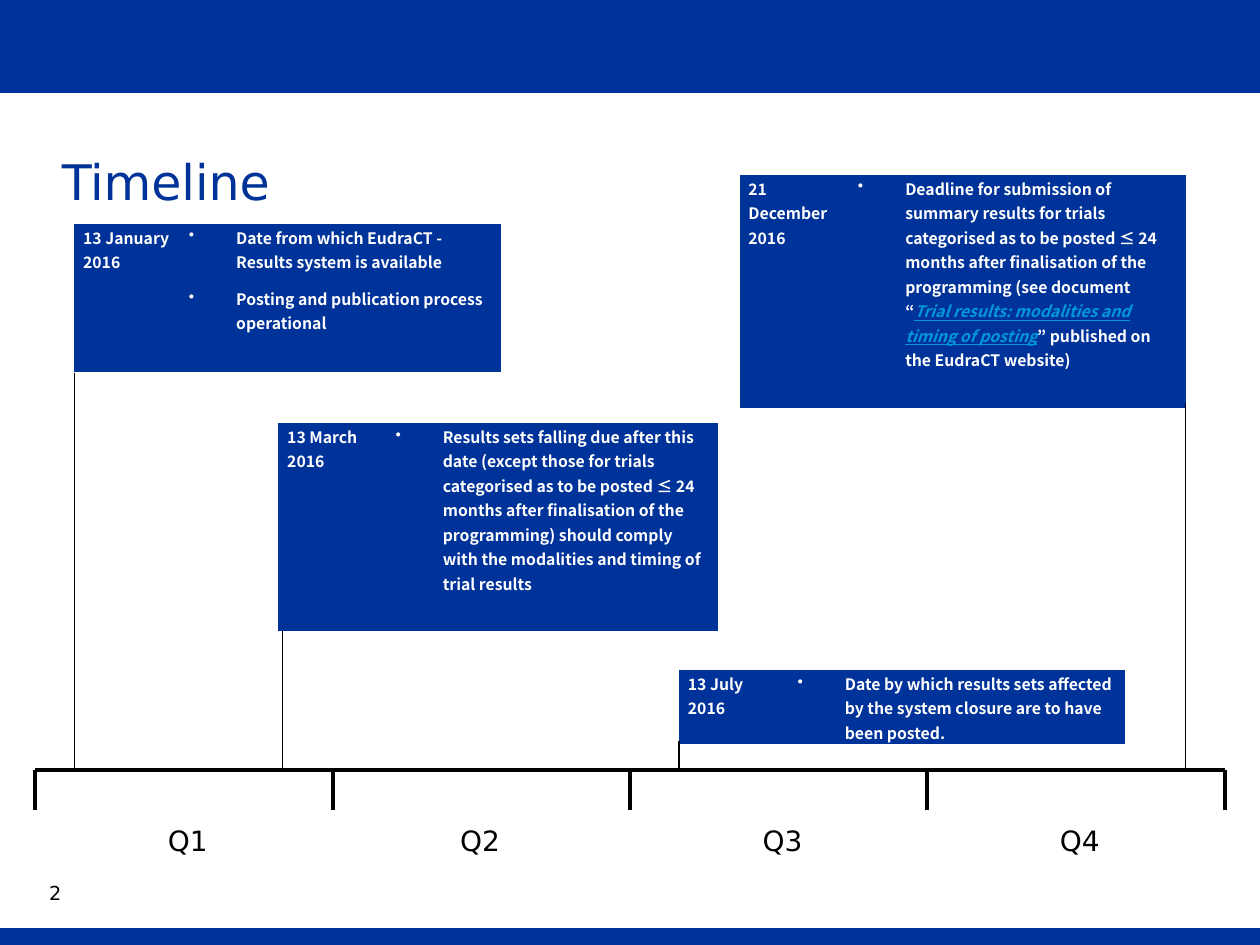
from dataclasses import dataclass

from lxml import etree
from pptx import Presentation, util as u
from pptx.dml.color import RGBColor
from pptx.enum import shapes, text
from pptx.oxml.ns import qn


@dataclass(frozen=True)
class Theme:
    blue = RGBColor.from_string("003399")
    link = RGBColor.from_string("0098DB")
    white = RGBColor.from_string("FFFFFF")
    black = RGBColor.from_string("000000")
    heading_font = "DejaVu Sans"
    event_font = "Noto Sans CJK KR"
    title_size, quarter_size, number_size, event_size = 28, 16, 11, 9


NO_TABLE_STYLE = "{2D5ABB26-0587-4C30-8999-92F81FD0307C}"
COLUMNS, ROWS = 100, 75

deck = Presentation()
deck.slide_width, deck.slide_height = u.Inches(10), u.Inches(7.5)
CELL = deck.slide_width / COLUMNS
slide = deck.slides.add_slide(deck.slide_layouts[5])


def grid(*cells):
    """Turn counts of grid cells into lengths."""
    return [round(cell * CELL) for cell in cells]


def add_line(x1, y1, x2, y2, color, width):
    line = slide.shapes.add_connector(
        shapes.MSO_CONNECTOR.STRAIGHT, *grid(x1, y1, x2, y2))
    line.line.color.rgb = color
    line.line.width = u.Pt(width)
    etree.SubElement(line._element.spPr, qn("a:effectLst"))


# Header and footer bands, each with a fine white edge
header_height, footer_top = 7.4, 73.6
for top, height, edge in ((footer_top, ROWS - footer_top, footer_top),
                          (0, header_height, header_height)):
    band = slide.shapes.add_shape(
        shapes.MSO_SHAPE.RECTANGLE, *grid(0, top, COLUMNS, height))
    band.shadow.inherit = False
    band.fill.solid()
    band.fill.fore_color.rgb = Theme.blue
    band.line.fill.background()
    add_line(0, edge, COLUMNS, edge, Theme.white, 0.25)

# Title
title = slide.shapes.title
title.left, title.top, title.width, title.height = grid(3.9, 11.2, 92.5, 10.4)
title_frame = title.text_frame
title_frame.text = "Timeline"
title_frame.auto_size = text.MSO_AUTO_SIZE.NONE
title_frame.vertical_anchor = text.MSO_ANCHOR.TOP
heading = title_frame.paragraphs[0]
heading.alignment = text.PP_ALIGN.LEFT
heading.line_spacing = u.Pt(36)

# Axis with one tick at each quarter's edge
axis_left, axis_y, tick_end, quarter = 2.8, 61.1, 64.3, 23.6
add_line(axis_left, axis_y, axis_left + 4 * quarter, axis_y, Theme.black, 2.25)
for edge in range(5):
    x = axis_left + edge * quarter
    add_line(x, axis_y, x, tick_end, Theme.black, 2.25)

# Quarter labels and page number
headings = [(heading, Theme.title_size, Theme.blue)]
for index, label_width in enumerate((10.2, 9.4, 10.2, 10.2)):
    label = slide.shapes.add_textbox(
        *grid(axis_left + index * quarter + 7, tick_end, label_width, 3.9))
    label.text_frame.word_wrap = True
    label.text_frame.text = f"Q{index + 1}"
    name = label.text_frame.paragraphs[0]
    name.alignment = text.PP_ALIGN.CENTER
    name.line_spacing = 1.2
    headings.append((name, Theme.quarter_size, Theme.black))

page = slide.shapes.add_textbox(*grid(3.9, 70.1, 3.4, 2.6)).text_frame
page.word_wrap = True
page.margin_left = page.margin_right = page.margin_top = page.margin_bottom = 0
page.text = "2"
page.paragraphs[0].line_spacing = u.Pt(12)
headings.append((page.paragraphs[0], Theme.number_size, Theme.black))

for paragraph, size, color in headings:
    paragraph.font.name = Theme.heading_font
    paragraph.font.size = u.Pt(size)
    paragraph.font.color.rgb = color

# Events: left, top, height, column widths, date, points made of text pieces
LINKED = "Trial results: modalities and timing of posting"
events = [
    (5.9, 17.8, 11.7, (8.4, 25.5), "13 January 2016",
     [["Date from which EudraCT - Results system is available"],
      ["Posting and publication process operational"]]),
    (22.1, 33.6, 16.5, (8.6, 26.3), "13 March 2016",
     [["Results sets falling due after this date (except those for trials "
       "categorised as to be posted ≤ 24 months after finalisation of the "
       "programming) should comply with the modalities and timing of trial "
       "results"]]),
    (53.9, 53.2, 5.8, (8.7, 26.7), "13 July 2016",
     [["Date by which results sets affected by the system closure are to "
       "have been posted."]]),
    (58.7, 13.9, 18.5, (8.7, 26.7), "21 December 2016",
     [["Deadline for submission of summary results for trials categorised "
       "as to be posted ≤ 24 months after finalisation of the programming "
       "(see document “", LINKED, "” published on the EudraCT website)"]]),
]
for left, top, height, widths, date, points in events:
    table = slide.shapes.add_table(
        1, 2, *grid(left, top, sum(widths), height)).table
    table.first_row = table.horz_banding = False
    table._tbl.tblPr.find(qn("a:tableStyleId")).text = NO_TABLE_STYLE
    for column, width in zip(table.columns, grid(*widths)):
        column.width = width
    for cell, entries in zip(table.rows[0].cells, ([[date]], points)):
        cell.fill.solid()
        cell.fill.fore_color.rgb = Theme.blue
        cell.margin_left, cell.margin_right = grid(0.7, 0.7)
        cell.margin_top = cell.margin_bottom = 0
        for number, pieces in enumerate(entries):
            frame = cell.text_frame
            entry = frame.add_paragraph() if number else frame.paragraphs[0]
            entry.alignment = text.PP_ALIGN.LEFT
            entry.line_spacing = u.Pt(14)
            entry.space_after = u.Pt(7)
            if entries is points:
                properties = entry._p.get_or_add_pPr()
                indent, = grid(3.75)
                properties.set("marL", str(indent))
                properties.set("indent", str(-indent))
                etree.SubElement(properties, qn("a:buChar"), char="•")
            entry.font.name = Theme.event_font
            entry.font.size = u.Pt(Theme.event_size)
            entry.font.bold = True
            entry.font.color.rgb = Theme.white
            for piece in pieces:
                run = entry.add_run()
                run.text = piece
                if piece == LINKED:
                    run.font.italic = run.font.underline = True
                    run.font.color.rgb = Theme.link

# Stems from the events down to the axis
for x, start in ((5.9, 29.6), (22.4, 50.1), (53.9, 58.8), (94.1, 32)):
    add_line(x, start, x, axis_y, Theme.black, 0.75)

deck.save("out.pptx")
